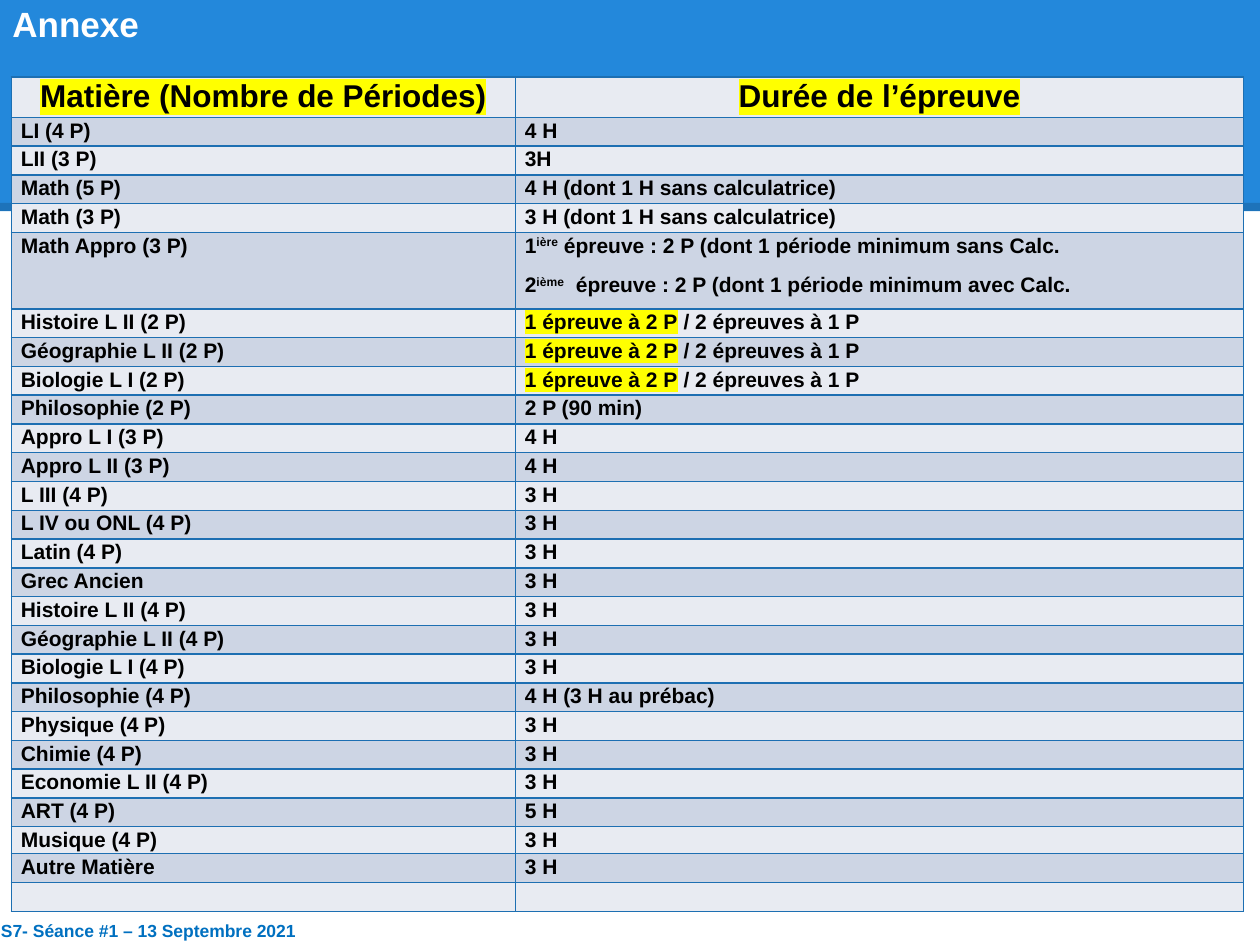
from dataclasses import dataclass

from lxml.etree import SubElement as Sub
from pptx import Presentation
from pptx.dml.color import RGBColor as Rgb
from pptx.enum.shapes import MSO_CONNECTOR as Link, MSO_SHAPE as Shape
from pptx.enum.text import MSO_ANCHOR as Anchor, MSO_AUTO_SIZE as Auto, PP_ALIGN as Align
from pptx.oxml.ns import qn
from pptx.util import Cm, Pt


@dataclass(frozen=True)
class Theme:
    font: str = "Arial"
    band: str = "2388DB"
    edge: str = "1D6FB2"
    pale: str = "E8EBF2"
    dark: str = "CDD5E4"
    ink: str = "000000"
    white: str = "FFFFFF"
    foot: str = "0070C0"
    mark: str = "FFFF00"
    title_size: int = 20
    head_size: int = 18
    body_size: int = 12
    foot_size: int = 10


# Run kinds: plain text, highlighted text, superscript
MARK, SUP = "mark", "sup"
CHOICE = [[("1 épreuve à 2 P", MARK), " / 2 épreuves à 1 P"]]
APPRO = [
    ["1", ("ière", SUP), " épreuve : 2 P (dont 1 période minimum sans Calc."],
    ["2", ("ième", SUP), "  épreuve : 2 P (dont 1 période minimum avec Calc."],
]
HEAD = [[[(text, MARK)]] for text in ("Matière (Nombre de Périodes)", "Durée de l’épreuve")]
EXAMS = [
    ("LI (4 P)", "4 H"),
    ("LII (3 P)", "3H"),
    ("Math (5 P)", "4 H (dont 1 H sans calculatrice)"),
    ("Math (3 P)", "3 H (dont 1 H sans calculatrice)"),
    ("Math Appro (3 P)", APPRO),
    ("Histoire L II (2 P)", CHOICE),
    ("Géographie L II (2 P)", CHOICE),
    ("Biologie L I (2 P)", CHOICE),
    ("Philosophie (2 P)", "2 P (90 min)"),
    ("Appro L I (3 P)", "4 H"),
    ("Appro L II (3 P)", "4 H"),
    ("L III (4 P)", "3 H"),
    ("L IV ou ONL (4 P)", "3 H"),
    ("Latin (4 P)", "3 H"),
    ("Grec Ancien", "3 H"),
    ("Histoire L II (4 P)", "3 H"),
    ("Géographie L II (4 P)", "3 H"),
    ("Biologie L I (4 P)", "3 H"),
    ("Philosophie (4 P)", "4 H (3 H au prébac)"),
    ("Physique (4 P)", "3 H"),
    ("Chimie (4 P)", "3 H"),
    ("Economie L II (4 P)", "3 H"),
    ("ART (4 P)", "5 H"),
    ("Musique (4 P)", "3 H"),
    ("Autre Matière", "3 H"),
    ("", ""),
]


class Deck:
    def __init__(self, theme):
        self.theme = theme
        self.prs = Presentation()
        self.prs.slide_width, self.prs.slide_height = Cm(25.4), Cm(19.05)
        self.slide = self.prs.slides.add_slide(self.prs.slide_layouts[5])
        self.shapes = self.slide.shapes

    def style(self, para, size, color):
        font = para.font
        font.name, font.size, font.bold = self.theme.font, Pt(size), True
        font.color.rgb = Rgb.from_string(color)

    def place(self, shape, left, top, width, height):
        shape.left, shape.top = Cm(left), Cm(top)
        shape.width, shape.height = Cm(width), Cm(height)

    def band(self, height):
        box = self.shapes.add_shape(Shape.RECTANGLE, 0, 0, self.prs.slide_width, Cm(height))
        box.shadow.inherit = False
        box.fill.solid()
        box.fill.fore_color.rgb = Rgb.from_string(self.theme.band)
        box.line.fill.background()

    def rule(self, top, weight, alpha):
        line = self.shapes.add_connector(Link.STRAIGHT, 0, Cm(top), self.prs.slide_width, Cm(top))
        line.line.width = Pt(weight)
        line.line.color.rgb = Rgb.from_string(self.theme.ink)
        props = line._element.spPr
        tint = next(props.iter(qn("a:srgbClr")))
        Sub(tint, qn("a:alpha"), val=str(alpha * 1000))
        Sub(props, qn("a:effectLst"))

    def title(self, text, *area):
        box = self.shapes.title
        self.place(box, *area)
        self.shapes._spTree.append(box._element)  # above the band
        frame = box.text_frame
        frame.text = text
        frame.auto_size = Auto.NONE
        frame.vertical_anchor = Anchor.BOTTOM
        frame.margin_left = frame.margin_right = Cm(0.25)
        frame.margin_top = frame.margin_bottom = Cm(0.25)
        para = frame.paragraphs[0]
        para.alignment = Align.LEFT
        self.style(para, self.theme.title_size, self.theme.white)

    def note(self, text, *area):
        frame = self.shapes.add_textbox(*map(Cm, area)).text_frame
        frame.word_wrap = True
        frame.auto_size = Auto.SHAPE_TO_FIT_TEXT
        frame.text = text
        self.style(frame.paragraphs[0], self.theme.foot_size, self.theme.foot)

    def runs(self, para, parts):
        for part in parts:
            text, kind = (part, None) if isinstance(part, str) else part
            run = para.add_run()
            run.text = text
            props = run._r.get_or_add_rPr()
            if kind == MARK:
                Sub(Sub(props, qn("a:highlight")), qn("a:srgbClr"), val=self.theme.mark)
            elif kind == SUP:
                props.set("baseline", "30000")

    def border(self, cell):
        props = cell._tc.get_or_add_tcPr()
        for side in ("L", "R", "T", "B"):
            line = Sub(props, qn(f"a:ln{side}"), w=str(Pt(1)))
            Sub(Sub(line, qn("a:solidFill")), qn("a:srgbClr"), val=self.theme.edge)

    def cell(self, cell, text, fill, size, align):
        self.border(cell)
        cell.fill.solid()
        cell.fill.fore_color.rgb = Rgb.from_string(fill)
        cell.margin_left = cell.margin_right = Cm(0.19)
        cell.margin_top = cell.margin_bottom = 0
        frame = cell.text_frame
        lines = [[text]] if isinstance(text, str) else text
        for i, parts in enumerate(lines):
            para = frame.add_paragraph() if i else frame.paragraphs[0]
            para.alignment = align
            para.line_spacing, para.space_after = 1.07, Pt(8)
            self.style(para, size, self.theme.ink)
            if text:
                self.runs(para, parts)
            else:
                Sub(para._p, qn("a:endParaRPr"), sz=str(size * 100))

    def table(self, rows, left, top, widths, heights):
        area = map(Cm, (left, top, sum(widths), sum(heights)))
        grid = self.shapes.add_table(len(rows), len(widths), *area).table
        grid.first_row = grid.horz_banding = False
        for col, width in zip(grid.columns, widths):
            col.width = Cm(width)
        theme = self.theme
        for r, (row, height) in enumerate(zip(rows, heights)):
            grid.rows[r].height = Cm(height)
            fill = theme.dark if r % 2 else theme.pale
            size = theme.body_size if r else theme.head_size
            align = Align.LEFT if r else Align.CENTER
            for c, text in enumerate(row):
                self.cell(grid.cell(r, c), text, fill, size, align)


def main():
    deck = Deck(Theme())
    # Header band
    deck.band(4.26)
    deck.rule(4.17, 4.5, 15)
    deck.title("Annexe", 0, 0, 4.2, 1.15)
    # Footer
    deck.note("S7- Séance #1 – 13 Septembre 2021", -0.23, 18.42, 8.71, 0.68)
    # Exam table: equal rows, a tall one for two lines, a tight one fitted to its text
    tall, tight = {"Math Appro (3 P)": 1.54}, {"Musique (4 P)": 0}
    special = {**tall, **tight}
    heights = [0.58] + [special.get(name, 0.58) for name, _ in EXAMS]
    deck.table([HEAD, *EXAMS], 0.23, 1.55, [10.16, 14.68], heights)
    deck.prs.save("out.pptx")


if __name__ == "__main__":
    main()
